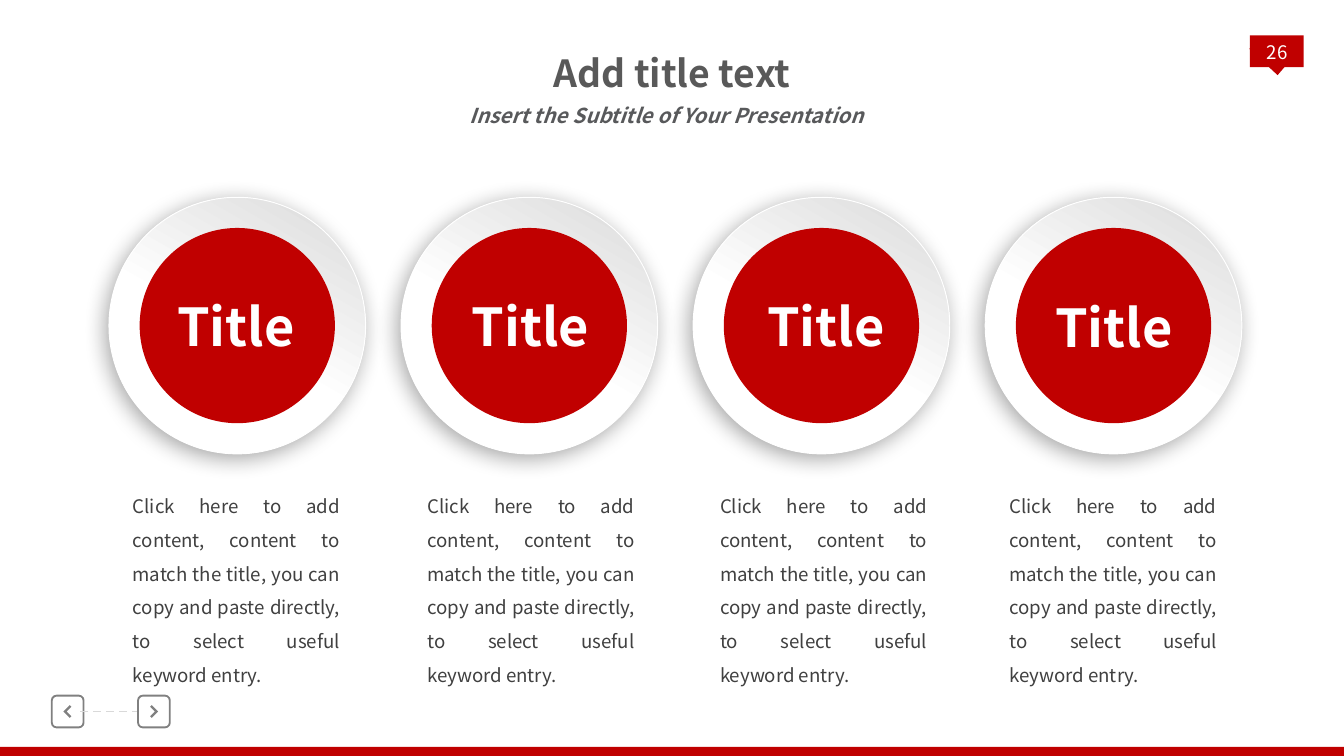
from lxml import etree
from pptx import Presentation
from pptx.dml.color import RGBColor
from pptx.enum.dml import MSO_LINE
from pptx.enum.shapes import MSO_CONNECTOR, MSO_SHAPE
from pptx.enum.text import MSO_ANCHOR, MSO_AUTO_SIZE, PP_ALIGN
from pptx.oxml.ns import qn
from pptx.util import Cm, Pt

RECT, OVAL = MSO_SHAPE.RECTANGLE, MSO_SHAPE.OVAL
WEDGE, ROUND = MSO_SHAPE.ISOSCELES_TRIANGLE, MSO_SHAPE.ROUNDED_RECTANGLE
MID, TOP = MSO_ANCHOR.MIDDLE, MSO_ANCHOR.TOP
MIDDLE, JUSTIFY = PP_ALIGN.CENTER, PP_ALIGN.JUSTIFY

RED = RGBColor(0xC0, 0x00, 0x00)
WHITE = RGBColor(0xFF, 0xFF, 0xFF)
PALE = RGBColor(0xD9, 0xD9, 0xD9)
GREY = RGBColor(0x80, 0x80, 0x80)
HEAD = RGBColor(0x59, 0x59, 0x59)
SUB = RGBColor(0x58, 0x59, 0x5B)
DARK = RGBColor(0x40, 0x40, 0x40)

FONT = "Noto Sans CJK SC"
BODY = ("Click here to add content, content to match the title, "
        "you can copy and paste directly, to select useful keyword entry.")

# Text styles: font values, colour, paragraph values
STYLES = {
    "head": ({"size": Pt(20), "bold": True}, HEAD, {"alignment": MIDDLE}),
    "sub": ({"size": Pt(11), "bold": True, "italic": True}, SUB,
            {"alignment": MIDDLE}),
    "page": ({"size": Pt(10)}, WHITE, {"alignment": MIDDLE}),
    "label": ({"size": Pt(28), "bold": True}, WHITE, {"alignment": MIDDLE}),
    "body": ({"size": Pt(10)}, DARK,
             {"alignment": JUSTIFY, "line_spacing": 1.5}),
}
FLUSH = {"margin_left": 0, "margin_right": 0,
         "margin_top": 0, "margin_bottom": 0}

# Columns: label left, label top, body left
COLS = [(3.1, 5.44, 2.51), (8.66, 5.44, 8.08),
        (14.25, 5.44, 13.61), (19.69, 5.46, 19.08)]
START, PITCH, DISC_TOP = 2.06, 5.52, 3.73
DISC, CORE = 4.85, 3.69


def assign(target, values):
    for key, value in values.items():
        setattr(target, key, value)


def write(shape, text, style, **frame):
    """Put one styled paragraph into a shape."""
    font, color, para = STYLES[style]
    box = shape.text_frame
    assign(box, {"word_wrap": True, "vertical_anchor": TOP,
                 "auto_size": MSO_AUTO_SIZE.NONE, **frame})
    line = box.paragraphs[0]
    assign(line, para)
    run = line.add_run()
    run.text = text
    assign(run.font, {"name": FONT, **font})
    run.font.color.rgb = color


def add_text(slide, place, text, style, **frame):
    box = slide.shapes.add_textbox(*map(Cm, place))
    write(box, text, style, **frame)


def add_shape(slide, kind, place, fill=None):
    shape = slide.shapes.add_shape(kind, *map(Cm, place))
    shape.shadow.inherit = False
    shape.line.fill.background()
    if fill is None:
        shape.fill.background()
    else:
        shape.fill.solid()
        shape.fill.fore_color.rgb = fill
    return shape


def add_glow(shape):
    """Give a shape a soft shadow to the lower left."""
    effects = shape._element.spPr.find(qn("a:effectLst"))
    outer = etree.SubElement(effects, qn("a:outerShdw"), {
        "blurRad": str(Pt(12)), "dist": str(Pt(3)), "dir": "8100000",
        "algn": "ctr", "rotWithShape": "0"})
    tint = etree.SubElement(outer, qn("a:srgbClr"), val="000000")
    etree.SubElement(tint, qn("a:alpha"), val="34000")


def add_disc(slide, left):
    """Draw the raised ring and its red core."""
    ring = add_shape(slide, OVAL, (left, DISC_TOP, DISC, DISC))
    ring.fill.gradient()
    ring.fill.gradient_angle = 60
    for stop, spot, color in zip(ring.fill.gradient_stops,
                                 (0.45, 1), (WHITE, PALE)):
        stop.position = spot
        stop.color.rgb = color
    ring.line.color.rgb = WHITE
    ring.line.width = Pt(0.5)
    add_glow(ring)
    inset = (DISC - CORE) / 2
    add_shape(slide, OVAL, (left + inset, DISC_TOP + inset, CORE, CORE), RED)


def add_arrow(slide, x, y, way):
    """Draw a boxed chevron centred on x, y; way is -1 left, 1 right."""
    side = 0.6
    frame = add_shape(slide, ROUND, (x - side / 2, y - side / 2, side, side))
    frame.adjustments[0] = 0.15
    frame.line.color.rgb = GREY
    frame.line.width = Pt(1)
    points = [(0.08, 0), (-0.04, -0.12), (-0.07, -0.09),
              (0.02, 0), (-0.07, 0.09), (-0.04, 0.12)]
    spots = [(Cm(x + way * dx), Cm(y + dy)) for dx, dy in points]
    pen = slide.shapes.build_freeform(*spots[0])
    pen.add_line_segments(spots[1:], close=True)
    mark = pen.convert_to_shape()
    mark.shadow.inherit = False
    mark.fill.solid()
    mark.fill.fore_color.rgb = GREY
    mark.line.fill.background()


def add_dash(slide, x1, x2, y):
    link = slide.shapes.add_connector(
        MSO_CONNECTOR.STRAIGHT, Cm(x1), Cm(y), Cm(x2), Cm(y))
    link.line.color.rgb = PALE
    assign(link.line, {"width": Pt(1), "dash_style": MSO_LINE.DASH})
    etree.SubElement(link._element.spPr, qn("a:effectLst"))


def main():
    deck = Presentation()
    assign(deck, {"slide_width": Cm(25.4), "slide_height": Cm(14.29)})
    slide = deck.slides.add_slide(deck.slide_layouts[5])

    # Footer bar and page badge
    add_shape(slide, RECT, (0, 14.12, 25.4, 0.17), RED)
    add_shape(slide, RECT, (23.62, 0.67, 1.02, 0.6), RED)
    add_shape(slide, WEDGE, (23.62, 0.89, 1.02, 0.53), RED).rotation = 176.8
    add_text(slide, (23.67, 0.56, 0.94, 0.97), "26", "page",
             **{**FLUSH, "margin_bottom": Cm(0.13), "vertical_anchor": MID})

    # Navigation
    add_arrow(slide, 1.28, 13.45, -1)
    add_arrow(slide, 2.91, 13.45, 1)
    add_dash(slide, 1.52, 2.59, 13.45)

    # Title and subtitle
    title = slide.shapes.title
    assign(title, {"left": Cm(9.91), "top": Cm(0.94),
                   "width": Cm(5.59), "height": Cm(0.86)})
    write(title, "Add title text", "head", **FLUSH)
    add_text(slide, (8.48, 1.83, 8.25, 0.74),
             "Insert the Subtitle of Your Presentation", "sub",
             word_wrap=False)

    # Four columns
    for i, (x, y, left) in enumerate(COLS):
        add_disc(slide, START + i * PITCH)
        add_text(slide, (x, y, 2.72, 1.45), "Title", "label", word_wrap=False)
        add_text(slide, (left, 9.15, 3.91, 3.76), BODY, "body", **FLUSH)

    deck.save("out.pptx")


if __name__ == "__main__":
    main()
